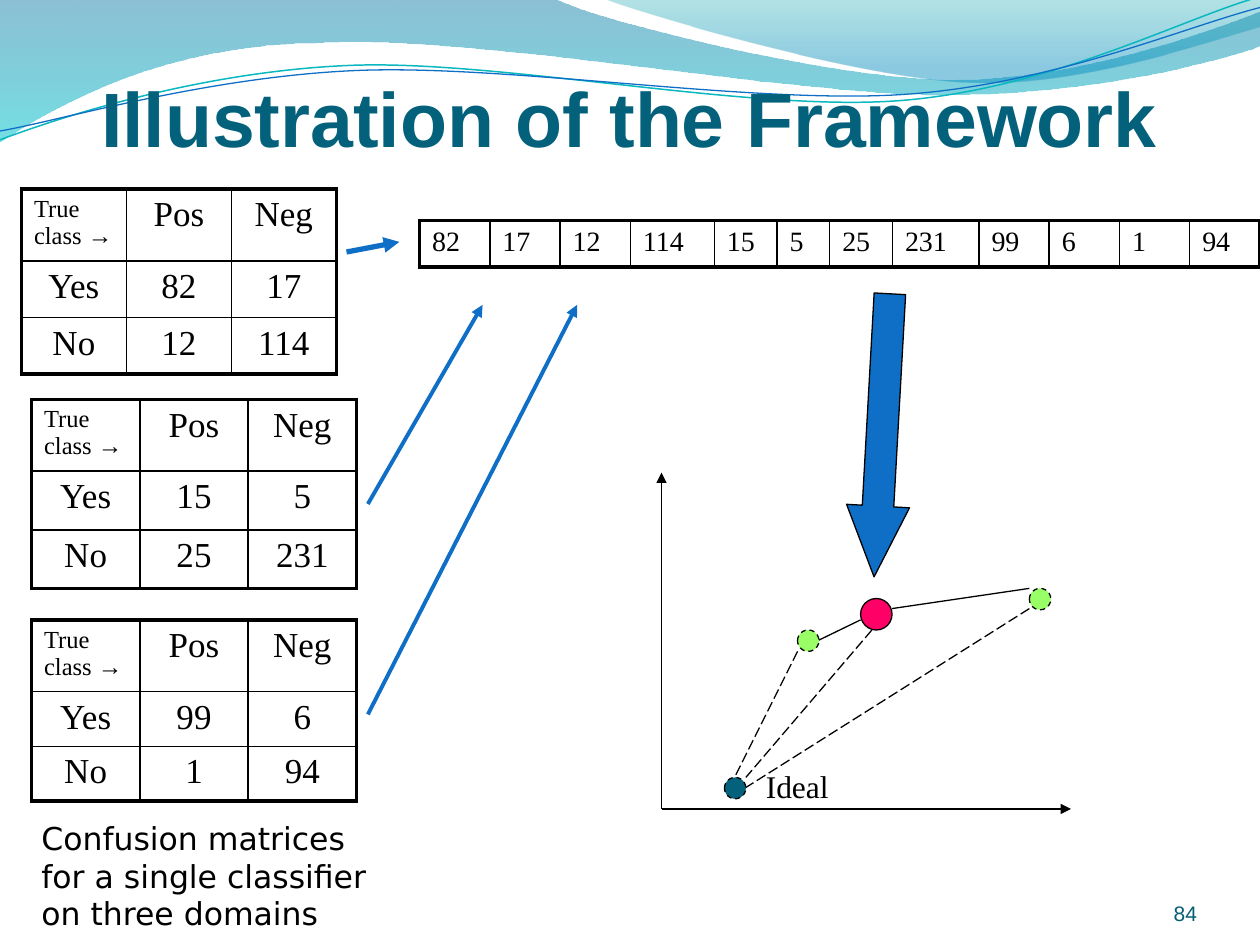
from dataclasses import dataclass
from typing import Any, NamedTuple

import lxml.etree
import pptx
import pptx.dml.color
import pptx.enum.dml
import pptx.enum.shapes
import pptx.enum.text
import pptx.oxml.ns
import pptx.util

Inches = pptx.util.Inches
Align = pptx.enum.text.PP_ALIGN
Anchor = pptx.enum.text.MSO_ANCHOR
Dash = pptx.enum.dml.MSO_LINE
Preset = pptx.enum.shapes.MSO_SHAPE
qualified = pptx.oxml.ns.qn


@dataclass(frozen=True)
class Theme:
    black: str = "000000"
    blue: str = "0F6FC6"
    teal: str = "0AB8BF"
    deep: str = "04617B"
    number: str = "045D75"
    pink: str = "FF0066"
    green: str = "99FF66"
    heading: str = "Arial"
    serif: str = "Times New Roman"
    sans: str = "DejaVu Sans"
    title_size: float = 44
    matrix_size: float = 20
    body_size: float = 18
    strip_size: float = 16
    corner_size: float = 14
    number_size: float = 12
    thin: float = 0.75
    inner: float = 1
    outer: float = 2.25


THEME = Theme()


class Wave(NamedTuple):
    start: tuple
    segments: list
    stops: tuple = ()
    color: str = ""
    width: float = 0


class Matrix(NamedTuple):
    left: float
    top: float
    width: float
    height: float
    counts: tuple


class Line(NamedTuple):
    start: tuple
    end: tuple
    color: str = THEME.black
    width: float = THEME.thin
    dash: Any = None
    arrow: bool = False


class Dot(NamedTuple):
    left: float
    top: float
    size: float
    color: str
    dash: Any = None


class Label(NamedTuple):
    box: tuple
    lines: tuple
    font: str
    size: float
    color: str = THEME.black
    bold: bool = False
    align: Any = Align.LEFT
    frame: dict = {}


BANDS = [
    Wave((0, -0.01), [(4.4, -0.01), (4.76, 0.17, 6.64, 0.63, 7.58, 0.63), (8.53, 0.63, 9.58, 0.26, 10, 0.09),
                      (10.01, 0.36), (9.83, 0.44, 8.7, 0.76, 7.46, 0.75), (6.22, 0.75, 3.82, 0.28, 2.57, 0.34),
                      (1.29, 0.35, 0.46, 0.83, -0.01, 1.13)],
         stops=((0, "0074A1", 45), (1, "00C6CF", 55))),
    Wave((4.79, -0.01), [(5.09, 0.11, 6.82, 0.62, 7.69, 0.65), (8.56, 0.69, 9.61, 0.32, 10, 0.21), (10, 0)],
         stops=((0, "00A1A9", 30), (0.8, "008BBF", 45))),
]
RIPPLES = [
    Wave((0, 1.11), [(0.48, 0.93, 1.58, 0.57, 2.77, 0.52), (3.95, 0.47, 5.93, 0.89, 7.13, 0.8),
                     (8.33, 0.71, 9.38, 0.15, 9.98, -0.02)], color=THEME.teal, width=0.85),
    Wave((0, 1.04), [(0.47, 0.96, 1.64, 0.61, 2.83, 0.56), (4.03, 0.51, 5.97, 0.83, 7.17, 0.75),
                     (8.36, 0.67, 9.41, 0.21, 10, 0.06)], color=THEME.blue, width=THEME.thin),
]
MATRICES = [
    Matrix(0.17, 1.5, 2.5, 1.47, (82, 17, 12, 114)),
    Matrix(0.25, 3.17, 2.58, 1.5, (15, 5, 25, 231)),
    Matrix(0.25, 4.92, 2.58, 1.43, (99, 6, 1, 94)),
]
HEADER_HEIGHT = 0.57
STRIP_WIDTH = 6.67
STRIP_WEIGHTS = [0.56, 0.56, 0.56, 0.67, 0.5, 0.42, 0.5, 0.69, 0.56, 0.56, 0.56, 0.56]
PLOT_LINES = [
    Line((5.25, 6.42), (5.25, 3.75), arrow=True),
    Line((5.25, 6.42), (8.5, 6.42), arrow=True),
    Line((6.92, 5), (5.92, 6.17), dash=Dash.LONG_DASH),
    Line((6.33, 5.17), (5.83, 6.17), dash=Dash.LONG_DASH),
    Line((6.5, 5.08), (6.83, 4.92)),
    Line((7.08, 4.83), (8.17, 4.67)),
    Line((8.17, 4.83), (5.92, 6.25), dash=Dash.LONG_DASH),
]
MATRIX_ARROWS = [
    Line((2.75, 2), (3.17, 1.92), THEME.blue, 3, arrow=True),
    Line((2.92, 4), (3.83, 2.42), THEME.blue, 2.25, arrow=True),
    Line((2.92, 5.67), (4.58, 2.42), THEME.blue, 2.25, arrow=True),
]
DOTS = [
    Dot(6.83, 4.75, 0.25, THEME.pink),
    Dot(5.75, 6.17, 0.17, THEME.deep, Dash.DASH),
    Dot(6.33, 5, 0.17, THEME.green, Dash.DASH),
    Dot(8.17, 4.67, 0.17, THEME.green, Dash.DASH),
]
NO_MARGINS = dict.fromkeys(("margin_left", "margin_top", "margin_right", "margin_bottom"), 0)
GROWING = {"word_wrap": False, "auto_size": pptx.enum.text.MSO_AUTO_SIZE.SHAPE_TO_FIT_TEXT}
NUMBER = Label((8.67, 6.95, 0.83, 0.4), ("84",), THEME.heading, THEME.number_size, THEME.number, align=Align.RIGHT,
               frame={"word_wrap": True, "vertical_anchor": Anchor.BOTTOM, **NO_MARGINS})
TITLE = Label((0.5, 0.3, 9, 1.25), ("Illustration of the Framework",), THEME.heading, THEME.title_size, THEME.deep,
              True, Align.CENTER, {"word_wrap": True, "vertical_anchor": Anchor.MIDDLE})
IDEAL = Label((5.98, 6.04, 0.7, 0.4), ("Ideal",), THEME.serif, THEME.body_size, frame=GROWING)
CAPTION = Label((0.23, 6.45, 2.79, 1), ("Confusion matrices", "for a single classifier", "on three domains"),
                THEME.sans, THEME.body_size, frame=GROWING)


def rgb(color: str) -> pptx.dml.color.RGBColor:
    return pptx.dml.color.RGBColor.from_string(color)


def apply_format(target: Any, values: dict) -> None:
    for name, value in values.items():
        setattr(target, name, value)


def write(paragraph: Any, text: str, font: str, size: float, color: str, align: Any, bold: bool = False) -> None:
    run = paragraph.add_run()
    run.text = text
    paragraph.alignment = align
    apply_format(run.font, {"name": font, "size": pptx.util.Pt(size), "bold": bold})
    run.font.color.rgb = rgb(color)


def set_line(line: Any, color: str, width: float, dash: Any = None) -> None:
    line.color.rgb = rgb(color)
    apply_format(line, {"width": pptx.util.Pt(width), "dash_style": dash})


def bend_segments(shape: Any, segments: list) -> None:
    for node, segment in zip(list(shape.element.iter(qualified("a:lnTo"))), segments):
        if len(segment) == 2:
            continue
        curve = lxml.etree.Element(qualified("a:cubicBezTo"))
        for x, y in zip(segment[::2], segment[1::2]):
            lxml.etree.SubElement(curve, qualified("a:pt"), x=str(Inches(x) - shape.left), y=str(Inches(y) - shape.top))
        node.getparent().replace(node, curve)


def draw_wave(shapes: Any, wave: Wave) -> None:
    vertices = [(Inches(x), Inches(y)) for x, y in [wave.start, *(segment[-2:] for segment in wave.segments)]]
    builder = shapes.build_freeform(*vertices[0])
    builder.add_line_segments(vertices[1:], close=bool(wave.stops))
    shape = builder.convert_to_shape()
    bend_segments(shape, wave.segments)
    shape.shadow.inherit = False
    if not wave.stops:
        shape.fill.background()
        set_line(shape.line, wave.color, wave.width)
        return
    shape.line.fill.background()
    shape.fill.gradient()
    shape.fill.gradient_angle = 270
    for stop, (position, color, _) in zip(shape.fill.gradient_stops, wave.stops):
        stop.position = position
        stop.color.rgb = rgb(color)
    gradient = shape.element.spPr.find(qualified("a:gradFill"))
    for node, (_, _, opacity) in zip(gradient.iter(qualified("a:srgbClr")), wave.stops):
        lxml.etree.SubElement(node, qualified("a:alpha"), val=str(opacity * 1000))


def draw_line(shapes: Any, line: Line) -> None:
    ends = [Inches(value) for value in line.start + line.end]
    connector = shapes.add_connector(pptx.enum.shapes.MSO_CONNECTOR.STRAIGHT, *ends)
    set_line(connector.line, line.color, line.width, line.dash)
    properties = connector.element.spPr
    if line.arrow:
        lxml.etree.SubElement(properties.find(qualified("a:ln")), qualified("a:tailEnd"), type="triangle")
    lxml.etree.SubElement(properties, qualified("a:effectLst"))


def draw_shape(shapes: Any, preset: Any, box: tuple, color: str, dash: Any = None) -> Any:
    shape = shapes.add_shape(preset, *map(Inches, box))
    shape.shadow.inherit = False
    shape.fill.solid()
    shape.fill.fore_color.rgb = rgb(color)
    set_line(shape.line, THEME.black, THEME.thin, dash)
    return shape


def draw_label(shapes: Any, label: Label) -> None:
    frame = shapes.add_textbox(*map(Inches, label.box)).text_frame
    apply_format(frame, label.frame)
    for index, text in enumerate(label.lines):
        paragraph = frame.add_paragraph() if index else frame.paragraphs[0]
        write(paragraph, text, label.font, label.size, label.color, label.align, label.bold)


def set_borders(cell: Any, outer_sides: dict) -> None:
    properties = cell._tc.get_or_add_tcPr()
    for index, (side, is_outer) in enumerate(outer_sides.items()):
        width = pptx.util.Pt(THEME.outer if is_outer else THEME.inner)
        border = lxml.etree.Element(qualified(f"a:ln{side}"), w=str(width))
        fill = lxml.etree.SubElement(border, qualified("a:solidFill"))
        lxml.etree.SubElement(fill, qualified("a:srgbClr"), val=THEME.black)
        properties.insert(index, border)


def draw_table(shapes: Any, left: float, top: float, columns: list, rows: list, texts: list,
               size: float, align: Any) -> None:
    box = map(Inches, (left, top, sum(columns), sum(rows)))
    table = shapes.add_table(len(rows), len(columns), *box).table
    apply_format(table, {"first_row": False, "horz_banding": False})
    for column, width in zip(table.columns, columns):
        column.width = Inches(width)
    for row_index, height in enumerate(rows):
        table.rows[row_index].height = Inches(height)
        for column_index, text in enumerate(texts[row_index]):
            cell = table.cell(row_index, column_index)
            cell.fill.background()
            corner = text.startswith("True")
            write(cell.text_frame.paragraphs[0], text, THEME.serif, THEME.corner_size if corner else size,
                  THEME.black, Align.LEFT if corner else align)
            set_borders(cell, {"L": column_index == 0, "R": column_index == len(columns) - 1,
                               "T": row_index == 0, "B": row_index == len(rows) - 1})


def draw_matrix(shapes: Any, matrix: Matrix) -> None:
    counts = [str(count) for count in matrix.counts]
    texts = [["True class →", "Pos", "Neg"], ["Yes", *counts[:2]], ["No", *counts[2:]]]
    rows = [HEADER_HEIGHT] + [(matrix.height - HEADER_HEIGHT) / 2] * 2
    draw_table(shapes, matrix.left, matrix.top, [matrix.width / 3] * 3, rows, texts, THEME.matrix_size, Align.CENTER)


def draw_strip(shapes: Any) -> None:
    counts = [str(count) for matrix in MATRICES for count in matrix.counts]
    columns = [weight * STRIP_WIDTH / sum(STRIP_WEIGHTS) for weight in STRIP_WEIGHTS]
    draw_table(shapes, 3.33, 1.75, columns, [0.37], [counts], THEME.strip_size, Align.LEFT)


def draw_plot(shapes: Any) -> None:
    for line in PLOT_LINES[:2]:
        draw_line(shapes, line)
    for dot in DOTS:
        draw_shape(shapes, Preset.OVAL, (dot.left, dot.top, dot.size, dot.size), dot.color, dot.dash)
    for line in PLOT_LINES[2:]:
        draw_line(shapes, line)
    draw_label(shapes, IDEAL)


def main() -> None:
    presentation = pptx.Presentation()
    apply_format(presentation, {"slide_width": Inches(10), "slide_height": Inches(7.5)})
    shapes = presentation.slides.add_slide(presentation.slide_layouts[6]).shapes
    for band in BANDS:
        draw_wave(shapes, band)
    ripples = shapes.add_group_shape().shapes
    for ripple in RIPPLES:
        draw_wave(ripples, ripple)
    draw_label(shapes, NUMBER)
    draw_label(shapes, TITLE)
    for matrix in MATRICES[:2]:
        draw_matrix(shapes, matrix)
    arrow = draw_shape(shapes, Preset.DOWN_ARROW, (6.75, 2.33, 0.5, 2.25), THEME.blue)
    arrow.rotation = 3.2
    arrow.adjustments[1] = 1.125
    draw_plot(shapes.add_group_shape().shapes)
    draw_matrix(shapes, MATRICES[2])
    draw_strip(shapes)
    for line in MATRIX_ARROWS:
        draw_line(shapes, line)
    draw_label(shapes, CAPTION)
    presentation.save("out.pptx")


if __name__ == "__main__":
    main()
